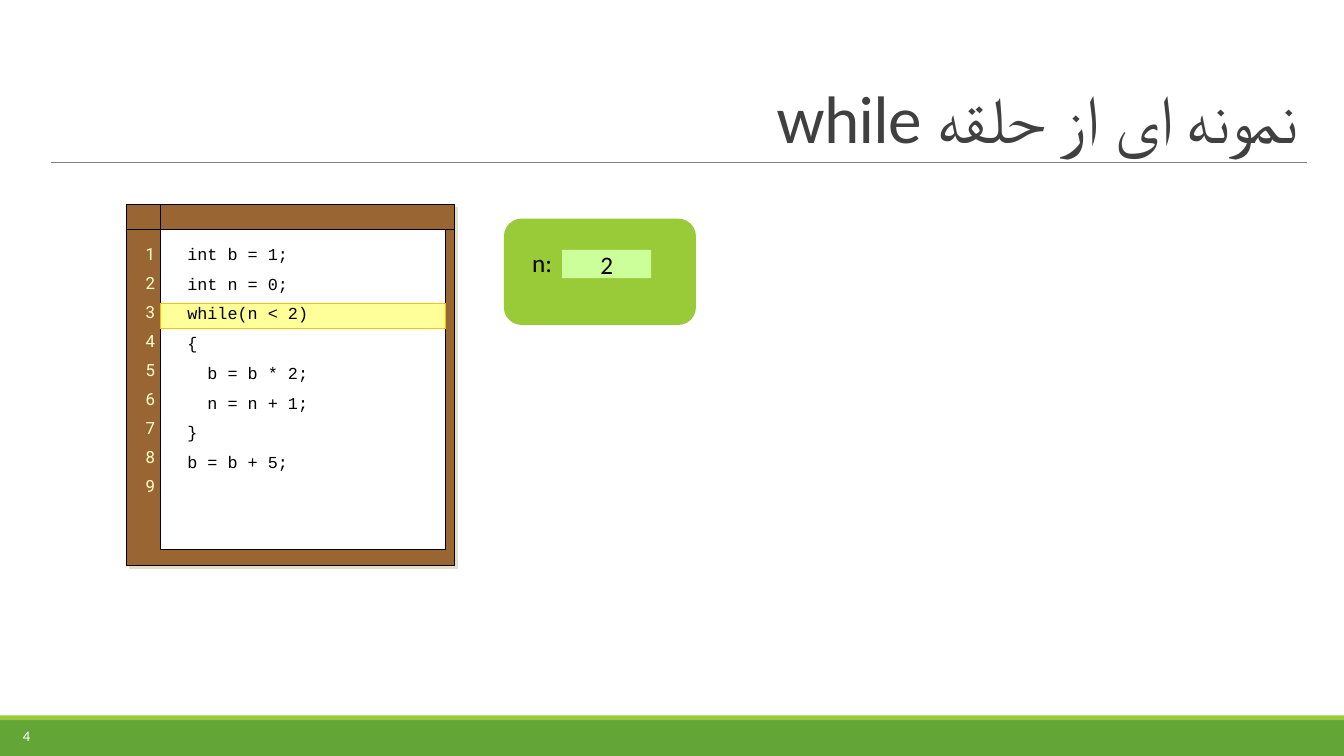
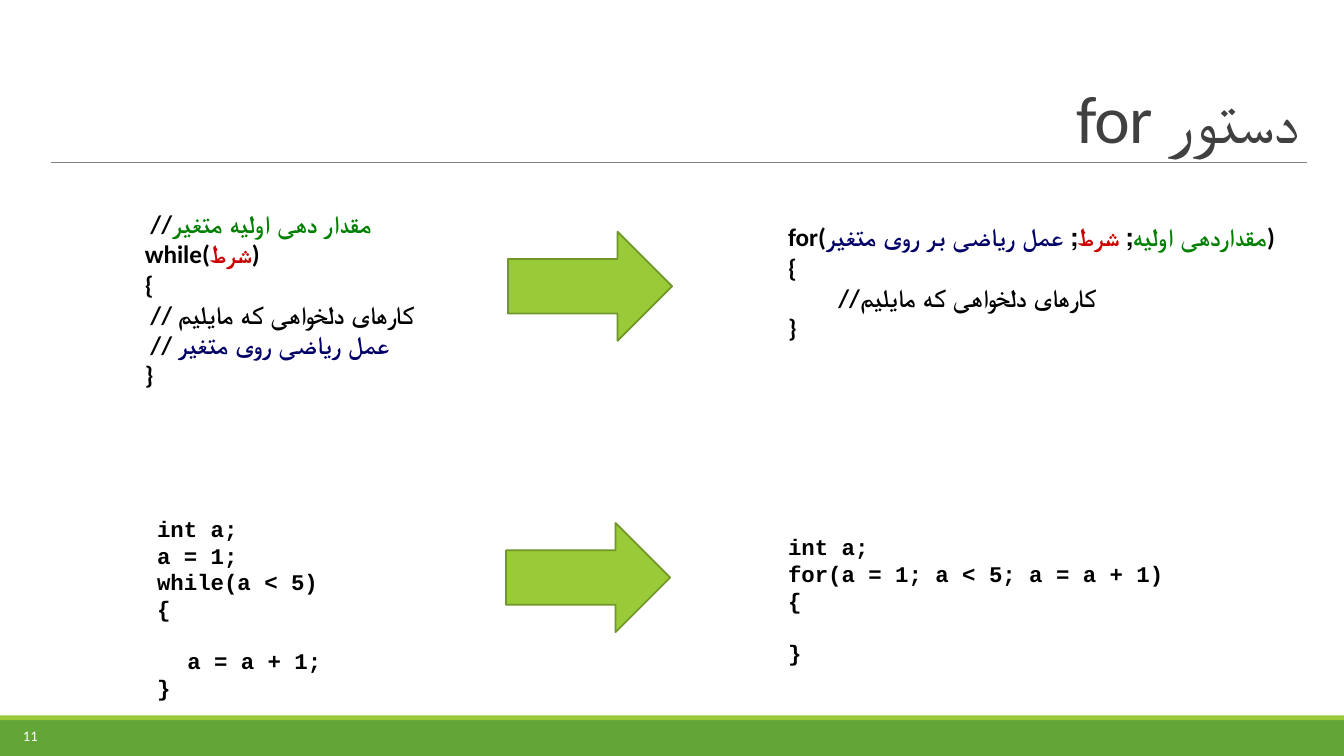
"""Builds two slides on while and for loops."""
from dataclasses import dataclass

from lxml import etree
from pptx import Presentation
from pptx.dml.color import RGBColor
from pptx.enum.shapes import MSO_CONNECTOR, MSO_SHAPE
from pptx.enum.text import MSO_ANCHOR, MSO_AUTO_SIZE, PP_ALIGN
from pptx.oxml.ns import qn
from pptx.util import Cm, Pt

RECTANGLE = MSO_SHAPE.RECTANGLE
ROUNDED = MSO_SHAPE.ROUNDED_RECTANGLE
RIGHT_ARROW = MSO_SHAPE.RIGHT_ARROW
STRAIGHT = MSO_CONNECTOR.STRAIGHT
TOP, MIDDLE, BOTTOM = MSO_ANCHOR.TOP, MSO_ANCHOR.MIDDLE, MSO_ANCHOR.BOTTOM
LEFT, CENTER, RIGHT = PP_ALIGN.LEFT, PP_ALIGN.CENTER, PP_ALIGN.RIGHT
NO_FIT = MSO_AUTO_SIZE.NONE
TITLE_ONLY = 5


@dataclass(frozen=True)
class Theme:
    """Colours, fonts and type sizes of the deck."""
    white: str = "FFFFFF"
    black: str = "000000"
    title: str = "404040"
    rule: str = "808080"
    green: str = "63A537"
    lime: str = "99CB38"
    lime_edge: str = "719629"
    pale_lime: str = "CCFF99"
    wood: str = "996633"
    wood_shadow: str = "E2DFCC"
    cream: str = "FFFFCC"
    highlight: str = "FFFF99"
    highlight_edge: str = "FFC000"
    start: str = "008000"
    condition: str = "CC0000"
    step: str = "000066"
    body_font: str = "Calibri"
    code_font: str = "Courier New"
    number_font: str = "Roboto"
    title_size: float = 48
    body_size: float = 18
    code_size: float = 16
    listing_size: float = 12
    footer_size: float = 10.5


THEME = Theme()


@dataclass(frozen=True)
class Line:
    """A line of text: its spans, first-line indent in cm and space before in points."""
    spans: tuple
    indent: float = 0
    before: float = 0


class SlideBuilder:
    """Holds the deck, the style and the current slide."""

    def __init__(self, theme):
        """Start an empty widescreen deck."""
        self.theme = theme
        self.deck = Presentation()
        self.deck.slide_width, self.deck.slide_height = Cm(33.87), Cm(19.05)
        self.page = None

    def start_page(self, title, number):
        """Add a slide with its title, rule, bands and number."""
        theme = self.theme
        self.page = self.deck.slides.add_slide(self.deck.slide_layouts[TITLE_ONLY])
        self.shape(RECTANGLE, (0, 18.13, 33.87, 0.92), theme.green)
        self.shape(RECTANGLE, (0, 18.03, 33.87, 0.12), theme.lime)
        self.line((1.28, 4.09), (32.94, 4.09), theme.rule, 0.5)
        self.title(title)
        self.text((0.33, 18.03, 3.66, 1.02), [number], size=theme.footer_size,
                  color=theme.white, anchor=MIDDLE)

    def title(self, words):
        """Place and format the right-to-left title."""
        box = self.page.shapes.title
        box.left, box.top, box.width, box.height = map(Cm, (1, 0.5, 31.98, 3.59))
        frame = box.text_frame
        frame.auto_size, frame.vertical_anchor = NO_FIT, BOTTOM
        frame.text = words
        para = frame.paragraphs[0]
        para.alignment, para.line_spacing = RIGHT, 0.85
        para._p.get_or_add_pPr().set("rtl", "1")
        self.font(para.font, self.theme.body_font, self.theme.title_size, self.theme.title)
        para.font._element.set("spc", "-50")

    def font(self, font, name, size, color, bold=False):
        """Format a font."""
        font.name, font.size, font.bold = name, Pt(size), bold
        font.color.rgb = RGBColor.from_string(color)

    def shape(self, kind, place, fill, edge=None, weight=0.75):
        """Add a filled preset shape, outlined if an edge colour is given."""
        shape = self.page.shapes.add_shape(kind, *map(Cm, place))
        shape.shadow.inherit = False
        shape.fill.solid()
        shape.fill.fore_color.rgb = RGBColor.from_string(fill)
        if edge:
            shape.line.color.rgb = RGBColor.from_string(edge)
            shape.line.width = Pt(weight)
        else:
            shape.line.fill.background()
        return shape

    def hard_shadow(self, shape, color):
        """Give a shape an unblurred shadow to the lower right."""
        effects = shape._element.spPr.find(qn("a:effectLst"))
        shadow = etree.SubElement(effects, qn("a:outerShdw"), blurRad="0",
                                  dist=str(Pt(2.8)), dir="2700000", algn="ctr")
        etree.SubElement(shadow, qn("a:srgbClr"), val=color)

    def line(self, start, end, color, weight=0.75):
        """Add a straight line."""
        line = self.page.shapes.add_connector(STRAIGHT, *map(Cm, start + end))
        line.line.color.rgb = RGBColor.from_string(color)
        line.line.width = Pt(weight)
        etree.SubElement(line._element.spPr, qn("a:effectLst"))

    def text(self, place, lines, side=0.25, **style):
        """Add a text box with the given side insets in cm."""
        frame = self.page.shapes.add_textbox(*map(Cm, place)).text_frame
        frame.margin_left = frame.margin_right = Cm(side)
        self.fill_text(frame, lines, **style)

    def fill_text(self, frame, lines, name=None, size=None, color=None, bold=False,
                  align=LEFT, anchor=TOP, gap=0):
        """Put lines, each a string or a Line, into a text frame."""
        frame.word_wrap, frame.vertical_anchor = True, anchor
        for index, line in enumerate(lines):
            if isinstance(line, str):
                line = Line(((line, None),))
            para = frame.add_paragraph() if index else frame.paragraphs[0]
            para.alignment = align
            if line.indent:
                para._p.get_or_add_pPr().set("indent", str(Cm(line.indent)))
            if index and (gap or line.before):
                para.space_before = Pt(gap + line.before)
            self.font(para.font, name or self.theme.body_font,
                      size or self.theme.body_size, color or self.theme.black, bold)
            for words, tint in line.spans:
                span = para.add_run()
                span.text = words
                if tint:
                    span.font.color.rgb = RGBColor.from_string(tint)

    def listing(self, lines, rows, current):
        """Draw a framed program listing with one highlighted row."""
        theme = self.theme
        left, top, width, header = 3.2, 5.16, 8.26, 0.63
        page_left, page_width, row_step = 4.04, 7.19, 0.72
        frame = self.shape(RECTANGLE, (left, top, width, 9.09), theme.wood, theme.black)
        self.hard_shadow(frame, theme.wood_shadow)
        self.text((3.4, 6.02, 0.64, 7.62), [str(row) for row in range(1, rows + 1)],
                  side=0.13, name=theme.number_font, size=theme.listing_size,
                  color=theme.cream, align=RIGHT, gap=6.3)
        self.shape(RECTANGLE, (page_left, top + header, page_width, 8.05),
                   theme.white, theme.black)
        self.shape(RECTANGLE, (page_left, 6.21 + (current - 1) * row_step, page_width, 0.64),
                   theme.highlight, theme.highlight_edge)
        self.text((4.47, 6.02, 6.78, 6.15), lines, name=theme.code_font,
                  size=theme.listing_size, gap=6.8)
        self.line((page_left, top + header), (page_left, top), theme.black)
        self.line((left, top + header), (left + width, top + header), theme.black)

    def variable(self, label, value):
        """Draw a card with a variable and its value."""
        theme = self.theme
        self.shape(ROUNDED, (12.7, 5.51, 4.84, 2.68), theme.lime)
        self.text((13.16, 6.1, 1.5, 1.02), [label])
        cell = self.shape(RECTANGLE, (14.17, 6.3, 2.24, 0.71), theme.pale_lime)
        self.fill_text(cell.text_frame, [value], align=CENTER, anchor=MIDDLE)

    def arrow(self, left, top):
        """Draw a block arrow from one loop form to the other."""
        self.shape(RIGHT_ARROW, (left, top, 4.14, 2.75), self.theme.lime,
                   self.theme.lime_edge, 1.25)

    def code(self, place, lines):
        """Add bold sample code."""
        self.text(place, lines, name=self.theme.code_font,
                  size=self.theme.code_size, bold=True)


def while_slide(builder):
    """Build the while example."""
    builder.start_page("نمونه ای از حلقه while", "4")
    builder.listing(["int b = 1;", "int n = 0;", "while(n < 2)", "{", "  b = b * 2;",
                     "  n = n + 1;", "}", "b = b + 5;"], rows=9, current=3)
    builder.variable("n:", "2")


def for_slide(builder):
    """Build the comparison of while and for."""
    theme = builder.theme
    tab, code_tab, skipped_line = 1.27, 0.76, 18
    builder.start_page("دستور for", "11")
    builder.text((3.4, 5.13, 10.8, 4.88), [
        Line(((" //", None), ("مقدار دهی اولیه متغیر", theme.start))),
        Line((("while(", None), ("شرط", theme.condition), (")", None))),
        "{",
        " // کارهای دلخواهی که مایلیم",
        Line(((" // ", None), ("عمل ریاضی روی متغیر", theme.step))),
        "}"], bold=True)
    builder.arrow(12.8, 5.84)
    builder.text((18.34, 5.46, 14.27, 4.11), [
        Line((("for(", None), ("مقداردهی اولیه", theme.start), ("; ", None),
              ("شرط", theme.condition), ("; ", None),
              ("عمل ریاضی بر روی متغیر", theme.step), (")", None)), tab),
        Line((("{", None),), tab),
        Line((("//کارهای دلخواهی که مایلیم", None),), 2 * tab),
        Line((("}", None),), tab)], bold=True)
    builder.code((19.61, 13.31, 11.71, 3.76), [
        "int a;", "for(a = 1; a < 5; a = a + 1)", "{",
        Line((("}", None),), before=skipped_line)])
    builder.code((3.71, 12.85, 11.71, 5.05), [
        "int a;", "a = 1;", "while(a < 5)", "{",
        Line((("a = a + 1;", None),), code_tab, skipped_line), "}"])
    builder.arrow(12.75, 13.18)


def main():
    """Build and save the deck."""
    builder = SlideBuilder(THEME)
    while_slide(builder)
    for_slide(builder)
    builder.deck.save("out.pptx")


if __name__ == "__main__":
    main()
